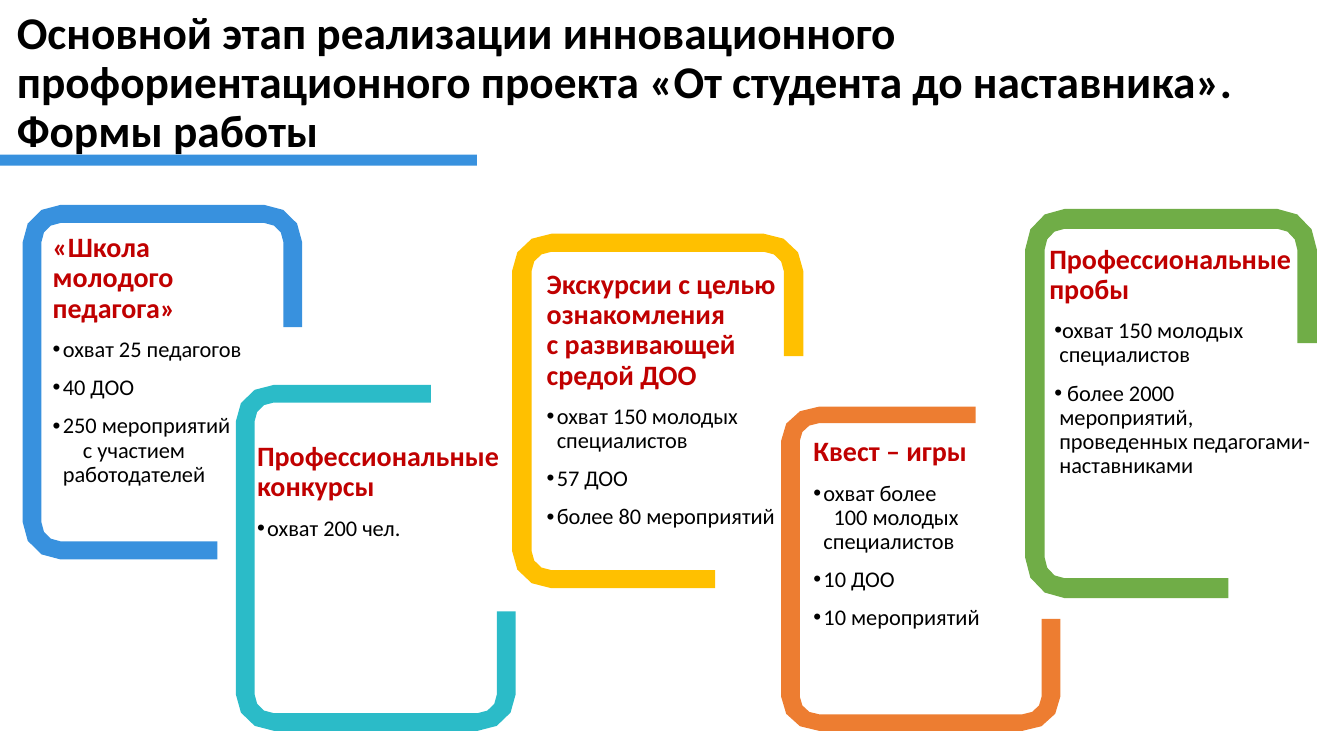
from dataclasses import dataclass
from math import cos, radians, sin

from lxml import etree
from pptx import Presentation
from pptx.dml.color import RGBColor
from pptx.enum import shapes, text
from pptx.oxml import ns
from pptx.util import Pt


@dataclass(frozen=True)
class Theme:
    font: str = "Calibri"
    ink: str = "000000"
    heading: str = "C00000"
    blue: str = "3891DE"
    teal: str = "2BBBC8"
    yellow: str = "FFC000"
    orange: str = "ED7D31"
    green: str = "70AD47"
    title_size: float = 32.4
    heading_size: float = 20
    body_size: float = 16


theme = Theme()

# Frame proportions, as shares of the frame's width (x) and height (y)
RX, RY = 0.135, 0.105
BAND_X, BAND_Y = 0.067, 0.051
LONG_END, SIDE_END = 0.697, 0.345


def arc(cx, cy, rx, ry, start, end, steps=3):
    """Points of an elliptic arc, angles in degrees, clockwise on the slide."""
    angles = [radians(start + (end - start) * i / steps) for i in range(steps + 1)]
    return [(cx + rx * cos(a), cy + ry * sin(a)) for a in angles]


def add_text(p, content, size, color, bold):
    for i, line in enumerate(content.split("\n")):
        if i:
            p.add_line_break()
        r = p.add_run()
        r.text = line
        r.font.name = theme.font
        r.font.size = Pt(size)
        r.font.bold = bold
        r.font.color.rgb = RGBColor.from_string(color)


inner = (RX - BAND_X, RY - BAND_Y)
outline = [
    *arc(RX, RY, RX, RY, 270, 180),
    *arc(RX, 1 - RY, RX, RY, 180, 90),
    (LONG_END, 1), (LONG_END, 1 - BAND_Y),
    *arc(RX, 1 - RY, *inner, 90, 180),
    *arc(RX, RY, *inner, 180, 270),
    *arc(1 - RX, RY, *inner, 270, 360),
    (1 - BAND_X, SIDE_END), (1, SIDE_END),
    *arc(1 - RX, RY, RX, RY, 360, 270),
]

# Frame colour, frame box, flipped, text box, hanging indent, tab stop, heading, bullets
cards = [
    (theme.orange, (558, 290.5, 199.4, 231.5), True, (573.8, 309, 164.9, 207.4), 7.2, 14.4,
     "Квест – игры",
     ["охват более\n\t100 молодых специалистов", "10 ДОО", "10 мероприятий"]),
    (theme.green, (732.2, 149.3, 208.5, 277.9), False, (742.4, 171.4, 202.3, 228.2), 3.6, None,
     "Профессиональные пробы",
     ["охват 150 молодых специалистов",
      " более 2000 мероприятий, проведенных педагогами-наставниками"]),
    (theme.teal, (168.5, 275, 199.8, 247), True, (176.5, 312.5, 195.1, 179.3), 7.2, None,
     "Профессиональные конкурсы",
     ["охват 200 чел."]),
    (theme.yellow, (365.8, 167, 208, 253.2), False, (383.4, 189.4, 186.5, 234), 7.2, None,
     "Экскурсии с целью ознакомления\nс развивающей средой ДОО",
     ["охват 150 молодых специалистов", "57 ДОО", "более 80 мероприятий"]),
    (theme.blue, (16.2, 146.4, 199.6, 253.2), False, (30.6, 163.3, 160.6, 213.8), 7.2, 21.6,
     "«Школа молодого педагога»",
     ["охват 25 педагогов", "40 ДОО", "250 мероприятий\n\tс участием работодателей"]),
]

prs = Presentation()
prs.slide_width, prs.slide_height = Pt(960), Pt(540)
s = prs.slides.add_slide(prs.slide_layouts[1])
title, body = s.placeholders

# Coloured frames
for color, (x, y, w, h), flipped, *_ in cards:
    points = [(Pt(x + w * u), Pt(y + h * (1 - v if flipped else v))) for u, v in outline]
    builder = s.shapes.build_freeform(*points[0])
    builder.add_line_segments(points[1:], close=True)
    frame = builder.convert_to_shape()
    frame.shadow.inherit = False
    frame.fill.solid()
    frame.fill.fore_color.rgb = RGBColor.from_string(color)
    frame.line.fill.background()

# Card texts: the first one fills the body placeholder
for i, (_, _, _, box, hang, tab, heading, bullets) in enumerate(cards):
    lengths = [Pt(v) for v in box]
    if i == 0:
        sp = body
        sp.left, sp.top, sp.width, sp.height = lengths
    else:
        sp = s.shapes.add_textbox(*lengths)
    tf = sp.text_frame
    tf.word_wrap = True
    tf.auto_size = text.MSO_AUTO_SIZE.NONE
    for n, content in enumerate([heading, *bullets]):
        p = tf.add_paragraph() if n else tf.paragraphs[0]
        p.line_spacing = 0.9
        p.space_before = Pt(10)
        pPr = p._p.get_or_add_pPr()
        if n == 0:
            pPr.set("marL", "0")
            pPr.set("indent", "0")
            etree.SubElement(pPr, ns.qn("a:buNone"))
            add_text(p, content, theme.heading_size, theme.heading, True)
            continue
        pPr.set("marL", str(Pt(7.2)))
        pPr.set("indent", str(-Pt(hang)))
        etree.SubElement(pPr, ns.qn("a:buFont")).set("typeface", "Arial")
        etree.SubElement(pPr, ns.qn("a:buChar")).set("char", "•")
        if tab:
            stops = etree.SubElement(pPr, ns.qn("a:tabLst"))
            etree.SubElement(stops, ns.qn("a:tab"), pos=str(Pt(tab)), algn="l")
        add_text(p, content, theme.body_size, theme.ink, False)

# Title and its underline
title.left, title.top, title.width, title.height = Pt(4.8), Pt(21.4), Pt(943.9), Pt(77)
tf = title.text_frame
tf.word_wrap = True
tf.auto_size = text.MSO_AUTO_SIZE.NONE
tf.vertical_anchor = text.MSO_ANCHOR.MIDDLE
p = tf.paragraphs[0]
p.alignment = text.PP_ALIGN.LEFT
p.line_spacing = 0.9
add_text(p, "Основной этап реализации инновационного профориентационного проекта "
            "«От студента до наставника». Формы работы", theme.title_size, theme.ink, True)

underline = s.shapes.add_shape(shapes.MSO_SHAPE.RECTANGLE, Pt(0), Pt(110.4), Pt(340.6), Pt(7.9))
underline.shadow.inherit = False
underline.fill.solid()
underline.fill.fore_color.rgb = RGBColor.from_string(theme.blue)
underline.line.fill.background()

prs.save("out.pptx")
